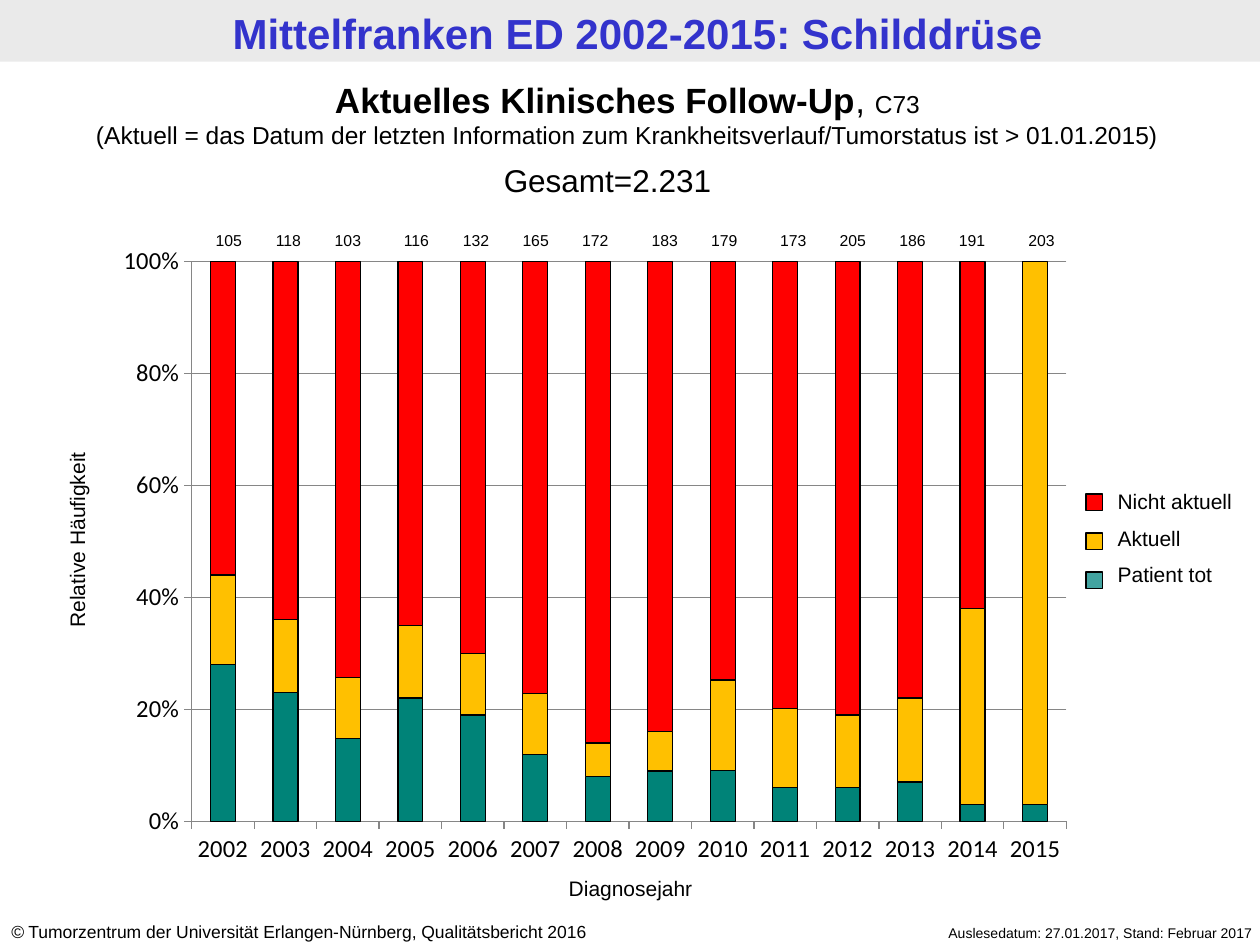
from dataclasses import dataclass

from lxml import etree
from pptx import Presentation
from pptx import util as u
from pptx.chart import data as chart_data
from pptx.dml import color
from pptx.enum import chart as chart_enum
from pptx.enum import shapes, text
from pptx.oxml import ns

COLUMNS, ROWS = 100, 75


@dataclass(frozen=True)
class Theme:
    ink: str = "000000"
    heading: str = "3333CC"
    band: str = "EAEAEA"
    grid: str = "868686"
    deceased: str = "008378"
    deceased_key: str = "008380"
    current: str = "FFC000"
    outdated: str = "FF0000"
    font: str = "Arial"
    chart_font: str = "Calibri"
    title: int = 24
    subtitle: int = 20
    total: int = 18
    note: int = 14
    label: int = 12
    footer: int = 10
    count: int = 9
    date: int = 8
    outline: float = 0.75


THEME = Theme()
LEFT, CENTER, RIGHT = text.PP_ALIGN.LEFT, text.PP_ALIGN.CENTER, text.PP_ALIGN.RIGHT


def rgb(value):
    return color.RGBColor.from_string(value)


def write(frame, paragraphs, size, align=LEFT, ink=THEME.ink, bold=False, gap=0):
    frame.word_wrap = True
    frame.auto_size = text.MSO_AUTO_SIZE.NONE
    frame.vertical_anchor = text.MSO_ANCHOR.TOP
    for index, runs in enumerate(paragraphs):
        paragraph = frame.add_paragraph() if index else frame.paragraphs[0]
        properties = paragraph._p.get_or_add_pPr()
        properties.set("marL", "0")
        properties.set("indent", "0")
        etree.SubElement(properties, ns.qn("a:buNone"))
        paragraph.alignment = align
        paragraph.space_before = u.Pt(gap if index else 0)
        for words, style in runs:
            run = paragraph.add_run()
            run.text = words
            run.font.name = THEME.font
            run.font.size = u.Pt(style.get("size", size))
            run.font.bold = style.get("bold", bold)
            run.font.italic = style.get("italic", False)
            run.font.color.rgb = rgb(ink)


def plain(*lines):
    return [[(line, {})] for line in lines]


class SlideBuilder:
    def __init__(self, deck, theme):
        self.deck = deck
        self.theme = theme
        self.slide = deck.slides.add_slide(deck.slide_layouts[1])

    def area(self, column, row, columns, rows):
        cell_width = self.deck.slide_width / COLUMNS
        cell_height = self.deck.slide_height / ROWS
        return [round(length) for length in (column * cell_width, row * cell_height,
                                             columns * cell_width, rows * cell_height)]

    def placeholder(self, index, cells, paragraphs, size, **style):
        holder = self.slide.placeholders[index]
        holder.left, holder.top, holder.width, holder.height = self.area(*cells)
        write(holder.text_frame, paragraphs, size, **style)

    def label(self, cells, paragraphs, size, rotation=0, **style):
        box = self.slide.shapes.add_textbox(*self.area(*cells))
        box.rotation = rotation
        write(box.text_frame, paragraphs, size, **style)

    def block(self, cells, fill, outline=None, opacity=None, behind=False):
        block = self.slide.shapes.add_shape(shapes.MSO_SHAPE.RECTANGLE, *self.area(*cells))
        block.shadow.inherit = False
        block.fill.solid()
        block.fill.fore_color.rgb = rgb(fill)
        if opacity:
            tint = block._element.spPr.find(".//" + ns.qn("a:srgbClr"))
            etree.SubElement(tint, ns.qn("a:alpha"), val=str(opacity * 1000))
        if outline:
            block.line.color.rgb = rgb(outline)
            block.line.width = u.Pt(self.theme.outline)
        else:
            block.line.fill.background()
        if behind:
            self.slide.shapes._spTree.insert(2, block._element)

    def stacked_chart(self, cells, years, series, plot_share):
        theme = self.theme
        figures = chart_data.CategoryChartData()
        figures.categories = years
        for name, values, _ in series:
            figures.add_series(name, values)
        chart = self.slide.shapes.add_chart(
            chart_enum.XL_CHART_TYPE.COLUMN_STACKED_100, *self.area(*cells), figures).chart
        chart.has_legend = False
        chart.has_title = False
        chart.font.name = theme.chart_font
        chart.font.size = u.Pt(theme.note)
        chart.font.color.rgb = rgb(theme.ink)

        plot = chart.plots[0]
        plot.gap_width = 150
        plot.overlap = 100
        plot.vary_by_categories = False
        for bars, (_, _, fill) in zip(plot.series, series):
            bars.format.fill.solid()
            bars.format.fill.fore_color.rgb = rgb(fill)
            bars.format.line.color.rgb = rgb(theme.ink)
            bars.format.line.width = u.Pt(theme.outline)

        shares = chart.value_axis
        shares.minimum_scale, shares.maximum_scale, shares.major_unit = 0, 1, 0.2
        shares.tick_labels.number_format = "0%"
        shares.tick_labels.number_format_is_linked = False
        shares.has_major_gridlines = True
        for line in (shares.major_gridlines.format.line, shares.format.line,
                     chart.category_axis.format.line):
            line.color.rgb = rgb(theme.grid)
            line.width = u.Pt(theme.outline)
        for axis in (shares, chart.category_axis):
            axis.major_tick_mark = chart_enum.XL_TICK_MARK.OUTSIDE
            axis.minor_tick_mark = chart_enum.XL_TICK_MARK.NONE

        plot_area = chart._chartSpace.chart.plotArea
        for old in plot_area.findall(ns.qn("c:layout")):
            plot_area.remove(old)
        layout = etree.Element(ns.qn("c:layout"))
        manual = etree.SubElement(layout, ns.qn("c:manualLayout"))
        settings = [("layoutTarget", "inner"), ("xMode", "edge"), ("yMode", "edge")]
        for tag, value in settings + list(zip("xywh", plot_share)):
            etree.SubElement(manual, ns.qn("c:" + tag), val=str(value))
        plot_area.insert(0, layout)


def main():
    deck = Presentation()
    deck.slide_width, deck.slide_height = u.Inches(10), u.Inches(7.5)
    page = SlideBuilder(deck, THEME)

    page.block((0, 0, COLUMNS, 4.9), THEME.band, behind=True)
    page.placeholder(0, (0.6, 0.1, 100, 4.9), plain("Mittelfranken ED 2002-2015: Schilddrüse"),
                     THEME.title, align=CENTER, ink=THEME.heading, bold=True)
    page.label((-0.4, 5.7, 100.4, 6.7), [
        [("Aktuelles Klinisches Follow-Up", {"bold": True}), (", ", {}),
         ("C73", {"size": THEME.note})],
        [("(Aktuell = das Datum der letzten Information zum Krankheitsverlauf/Tumorstatus"
          " ist > 01.01.2015)", {"size": THEME.note})],
    ], THEME.subtitle, align=CENTER)
    page.label((39, 12.3, 22, 4), plain("Gesamt=2.231"), THEME.total)

    follow_up = [
        ("Patient tot", (28, 23, 15, 22, 19, 12, 8, 9, 9, 6, 6, 7, 3, 3), THEME.deceased),
        ("Aktuell", (16, 13, 11, 13, 11, 11, 6, 7, 16, 14, 13, 15, 35, 97), THEME.current),
        ("Nicht aktuell", (56, 64, 75, 65, 70, 78, 86, 84, 74, 79, 81, 78, 62, None),
         THEME.outdated),
    ]
    years = [str(year) for year in range(2002, 2016)]
    page.stacked_chart((8.2, 18.7, 78, 51.1), years, follow_up, (0.09, 0.04, 0.89, 0.87))
    page.label((-5.9, 41.3, 24.1, 3.1), plain("Relative Häufigkeit"), THEME.label,
               rotation=270, align=CENTER)
    page.label((38.8, 69, 22.5, 3.1), plain("Diagnosejahr"), THEME.label, align=CENTER)

    page.placeholder(1, (87.7, 38.3, 14.2, 9.1),
                     plain(*(name for name, _, _ in reversed(follow_up))), THEME.label, gap=6.5)
    keys = [(THEME.outdated, None), (THEME.current, None), (THEME.deceased_key, 74)]
    for position, (fill, opacity) in enumerate(keys):
        page.block((86.2, 39.2 + 3.1 * position, 1.3, 1.3), fill, THEME.ink, opacity)

    case_groups = [(15.4, (105, 118, 103)), (30.3, (116, 132, 165, 172)), (50, (183, 179)),
                   (60.2, (173, 205, 186, 191)), (79.9, (203,))]
    for start, cases in case_groups:
        for position, number in enumerate(cases):
            page.label((start + 4.73 * position, 17.85, 5.5, 2.5), plain(str(number)),
                       THEME.count, align=CENTER)

    page.label((-0.1, 72.6, 52.4, 2.7), [
        [("©", {"italic": True}),
         (" Tumorzentrum der Universität Erlangen-Nürnberg, Qualitätsbericht 2016", {})],
    ], THEME.footer)
    page.label((66.5, 72.9, 33.9, 2.4), plain("Auslesedatum: 27.01.2017, Stand: Februar 2017"),
               THEME.date, align=RIGHT)
    deck.save("out.pptx")


if __name__ == "__main__":
    main()
